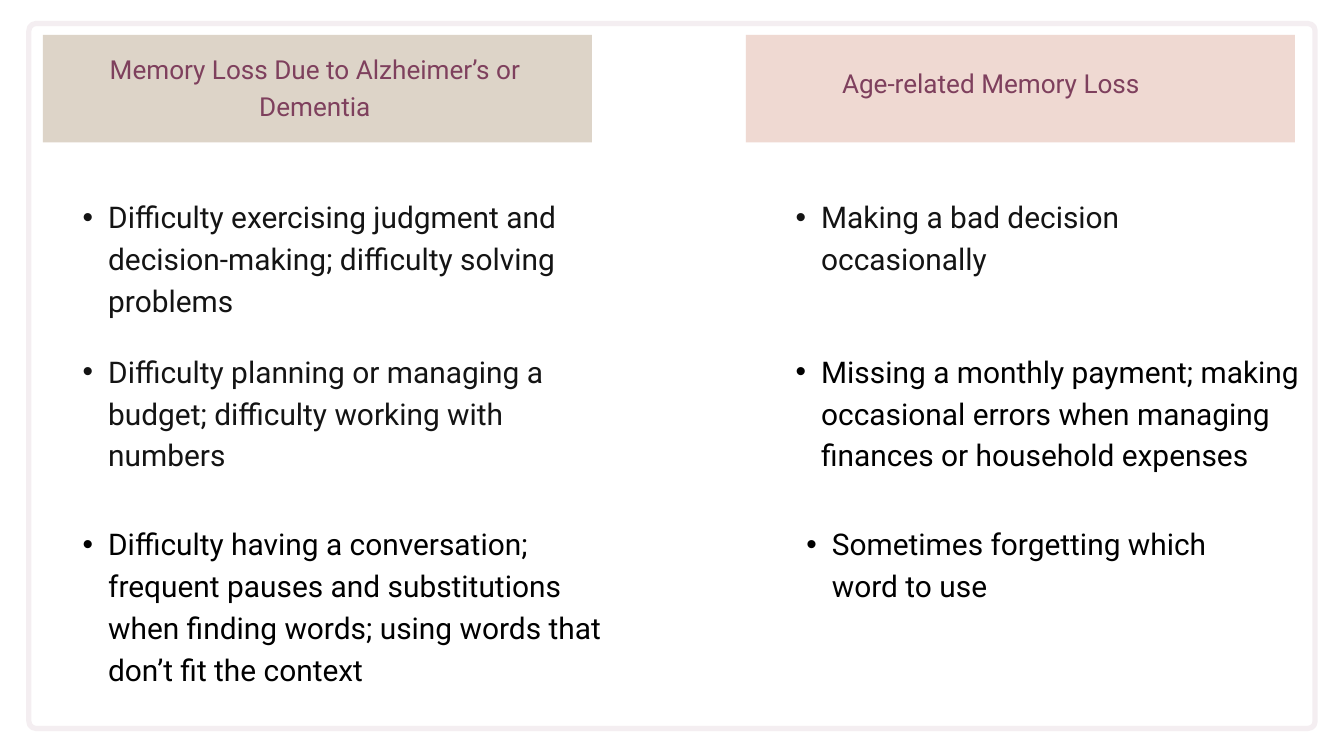
from lxml import etree
from pptx import Presentation
from pptx.dml.color import RGBColor
from pptx.enum.shapes import MSO_SHAPE
from pptx.enum.text import MSO_ANCHOR, MSO_AUTO_SIZE, PP_ALIGN
from pptx.oxml.ns import qn
from pptx.util import Inches, Pt

RECTANGLE, ROUNDED = MSO_SHAPE.RECTANGLE, MSO_SHAPE.ROUNDED_RECTANGLE
LEFT, CENTER = PP_ALIGN.LEFT, PP_ALIGN.CENTER

PLUM = RGBColor(0x74, 0x30, 0x50)
SAND = RGBColor(0xDB, 0xD1, 0xC4)
BLUSH = RGBColor(0xEE, 0xD6, 0xCF)
BLACK = RGBColor(0, 0, 0)
WHITE = RGBColor(0xFF, 0xFF, 0xFF)

WIDTH, HEIGHT = 20, 11.25
FONT = "Roboto"
LINE_RATIO = 1.4
HEADING = {"size": Pt(28), "color": PLUM}
BODY = {"size": Pt(32), "color": BLACK}
INDENT, HANGING = 0.76, 0.38
FRAME_INSET, FRAME_LINE, FRAME_OPACITY = (0.43, 0.35), 5.6, 8

# Content: each column has a banner, a heading and one point per row
BANNER_TOP, BANNER_SIZE = 0.52, (8.17, 1.6)
ROWS = [2.87, 5.17, 7.74]
COLUMNS = [
    {"banner": (0.64, SAND),
     "heading": ("Memory Loss Due to Alzheimer’s or Dementia", (1.12, 0.72, 7.13, 1.06), CENTER),
     "holders": (1, 2),
     "points": [
         ("Difficulty exercising judgment and decision-making; difficulty solving problems",
          0.85, 7.68, 3),
         ("Difficulty planning or managing a budget; difficulty working with numbers",
          0.85, 7.68, 3),
         ("Difficulty having a conversation; frequent pauses and substitutions when "
          "finding words; using words that don’t fit the context", 0.85, 8.54, 4)]},
    {"banner": (11.1, BLUSH),
     "heading": ("Age-related Memory Loss", (12.53, 0.92, 5.32, 0.52), LEFT),
     "holders": (3, 4),
     "points": [
         ("Making a bad decision occasionally", 11.46, 6.13, 2),
         ("Missing a monthly payment; making occasional errors when managing finances "
          "or household expenses", 11.46, 8.08, 3),
         ("Sometimes forgetting which word to use", 11.62, 7.12, 2)]},
]

deck = Presentation()
deck.slide_width, deck.slide_height = Inches(WIDTH), Inches(HEIGHT)
page = deck.slides.add_slide(deck.slide_layouts.get_by_name("Comparison"))
holders = {holder.placeholder_format.idx: holder for holder in page.placeholders}


def set_all(target, values):
    for name, value in values.items():
        setattr(target, name, value)


def add_panel(kind, left, top, width, height, color):
    panel = page.shapes.add_shape(kind, *map(Inches, (left, top, width, height)))
    panel.shadow.inherit = False
    panel.fill.solid()
    panel.fill.fore_color.rgb = color
    panel.line.fill.background()
    return panel


def set_opacity(fill, percent):
    color = fill._xPr.find(qn("a:solidFill"))[0]
    etree.SubElement(color, qn("a:alpha"), val=str(percent * 1000))


def set_bullet(para, char):
    props = para._p.get_or_add_pPr()
    props.set("marL", str(Inches(INDENT)))
    props.set("indent", str(-Inches(HANGING)))
    if char:
        etree.SubElement(props, qn("a:buFont"), typeface="Arial")
        etree.SubElement(props, qn("a:buChar"), char=char)


def write(box, text, place, look, align=LEFT, bullet=None):
    """Place a box on top of the parts so far and fill it with one paragraph."""
    page.shapes._spTree.append(box._element)
    set_all(box, dict(zip(("left", "top", "width", "height"), map(Inches, place))))
    frame = box.text_frame
    set_all(frame, {"margin_left": 0, "margin_top": 0, "margin_right": 0,
                    "margin_bottom": 0, "word_wrap": True,
                    "auto_size": MSO_AUTO_SIZE.NONE, "vertical_anchor": MSO_ANCHOR.TOP})
    para = frame.paragraphs[0]
    if bullet:
        set_bullet(para, bullet)
    set_all(para, {"alignment": align, "space_before": Pt(0),
                   "line_spacing": Pt(round(look["size"].pt * LINE_RATIO, 1))})
    span = para.add_run()
    span.text = text
    set_all(span.font, {"name": FONT, "size": look["size"], "bold": False})
    span.font.color.rgb = look["color"]


def add_point(column, row):
    text, left, width, lines = column["points"][row]
    height = lines * BODY["size"].inches * LINE_RATIO
    box = (holders[column["holders"][1]] if row == 0
           else page.shapes.add_textbox(0, 0, 0, 0))
    write(box, text, (left, ROWS[row], width, height), BODY, bullet="•")


# Banners and headings
for column in COLUMNS:
    left, color = column["banner"]
    add_panel(RECTANGLE, left, BANNER_TOP, *BANNER_SIZE, color)
    text, place, align = column["heading"]
    write(holders[column["holders"][0]], text, place, HEADING, align)

left_column, right_column = COLUMNS

# Points under the translucent frame
for column, row in ((left_column, 0), (left_column, 1), (right_column, 0)):
    add_point(column, row)

# Rounded frame
inset_x, inset_y = FRAME_INSET
border = add_panel(ROUNDED, inset_x, inset_y, WIDTH - 2 * inset_x,
                   HEIGHT - 0.06 - 2 * inset_y, WHITE)
border.adjustments[0] = 0.01
border.line.width = Pt(FRAME_LINE)
border.line.fill.solid()
border.line.color.rgb = PLUM
for fill in (border.fill, border.line.fill):
    set_opacity(fill, FRAME_OPACITY)

# Points above the frame
for column, row in ((right_column, 1), (left_column, 2), (right_column, 2)):
    add_point(column, row)

# The slide has no overall title
title = page.shapes.title._element
title.getparent().remove(title)

deck.save("out.pptx")
